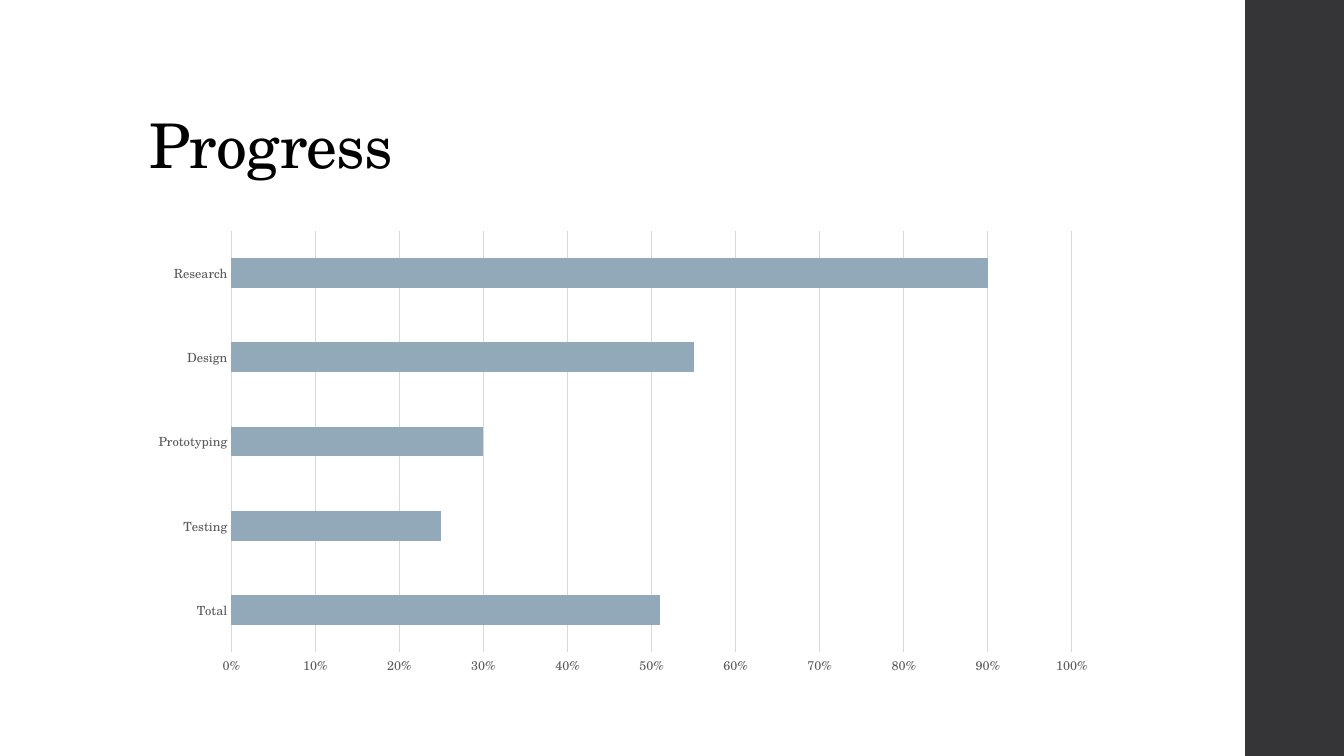
from pptx import Presentation
from pptx.chart.data import CategoryChartData
from pptx.dml.color import RGBColor
from pptx.enum import chart as ch, shapes, text
from pptx.util import Inches, Pt

# Content
TITLE = "Progress"
SERIES = "Series 1"
PROGRESS = [  # bottom bar first
    ("Total", 0.51),
    ("Testing", 0.25),
    ("Prototyping", 0.3),
    ("Design", 0.55),
    ("Research", 0.9),
]

# Style
FONT = "TeX Gyre Schola"
BLACK = RGBColor(0x00, 0x00, 0x00)
DARK = RGBColor(0x35, 0x35, 0x37)
GREY = RGBColor(0x59, 0x59, 0x59)
RULE = RGBColor(0xD9, 0xD9, 0xD9)
BAR = RGBColor(0x92, 0xA9, 0xB9)

# Layout in inches
WIDTH, HEIGHT = 13.33, 7.5
BAND_LEFT = 12.35
LEFT = 1.38


def set_font(font, size, color):
    font.name, font.size, font.bold = FONT, Pt(size), False
    font.color.rgb = color


def write(tf, content, size, color, spacing=0, line=1.0):
    p = tf.paragraphs[0]
    p.alignment, p.line_spacing = text.PP_ALIGN.LEFT, line
    r = p.add_run()
    r.text = content
    set_font(r.font, size, color)
    r.font._element.set("spc", str(int(spacing * 100)))


def style_rule(line):
    line.color.rgb, line.width = RULE, Pt(0.75)


prs = Presentation()
prs.slide_width, prs.slide_height = Inches(WIDTH), Inches(HEIGHT)
s = prs.slides.add_slide(prs.slide_layouts[5])

# Side band
band = s.shapes.add_shape(shapes.MSO_SHAPE.RECTANGLE, Inches(BAND_LEFT), 0,
                          Inches(WIDTH - BAND_LEFT), Inches(HEIGHT))
band.shadow.inherit = False
band.fill.solid()
band.fill.fore_color.rgb = DARK
band.line.fill.background()

# Title
title = s.shapes.title
title.left, title.top = Inches(LEFT), Inches(0.4)
title.width, title.height = Inches(10.6), Inches(1.45)
tf = title.text_frame
tf.word_wrap = True
tf.vertical_anchor = text.MSO_ANCHOR.BOTTOM
write(tf, TITLE, 44, BLACK, spacing=-0.5, line=0.9)

# Progress chart
data = CategoryChartData(number_format="0%")
data.categories = [name for name, _ in PROGRESS]
data.add_series(SERIES, [value for _, value in PROGRESS])
chart = s.shapes.add_chart(ch.XL_CHART_TYPE.BAR_CLUSTERED, Inches(LEFT), Inches(2.2),
                           Inches(9.6), Inches(4.59), data).chart
chart.has_title = chart.has_legend = False
set_font(chart.font, 10, BLACK)

plot = chart.plots[0]
plot.gap_width, plot.vary_by_categories = 182, False
fill = plot.series[0].format.fill
fill.solid()
fill.fore_color.rgb = BAR

# Axes
cat, val = chart.category_axis, chart.value_axis
for axis in (cat, val):
    axis.major_tick_mark = axis.minor_tick_mark = ch.XL_TICK_MARK.NONE
    set_font(axis.tick_labels.font, 9, GREY)
cat.has_major_gridlines = False
style_rule(cat.format.line)
val.minimum_scale, val.maximum_scale, val.major_unit = 0, 1, 0.1
val.has_major_gridlines = True
style_rule(val.major_gridlines.format.line)
val.format.line.fill.background()
val.tick_labels.number_format = "0%"
val.tick_labels.number_format_is_linked = False

prs.save("out.pptx")
